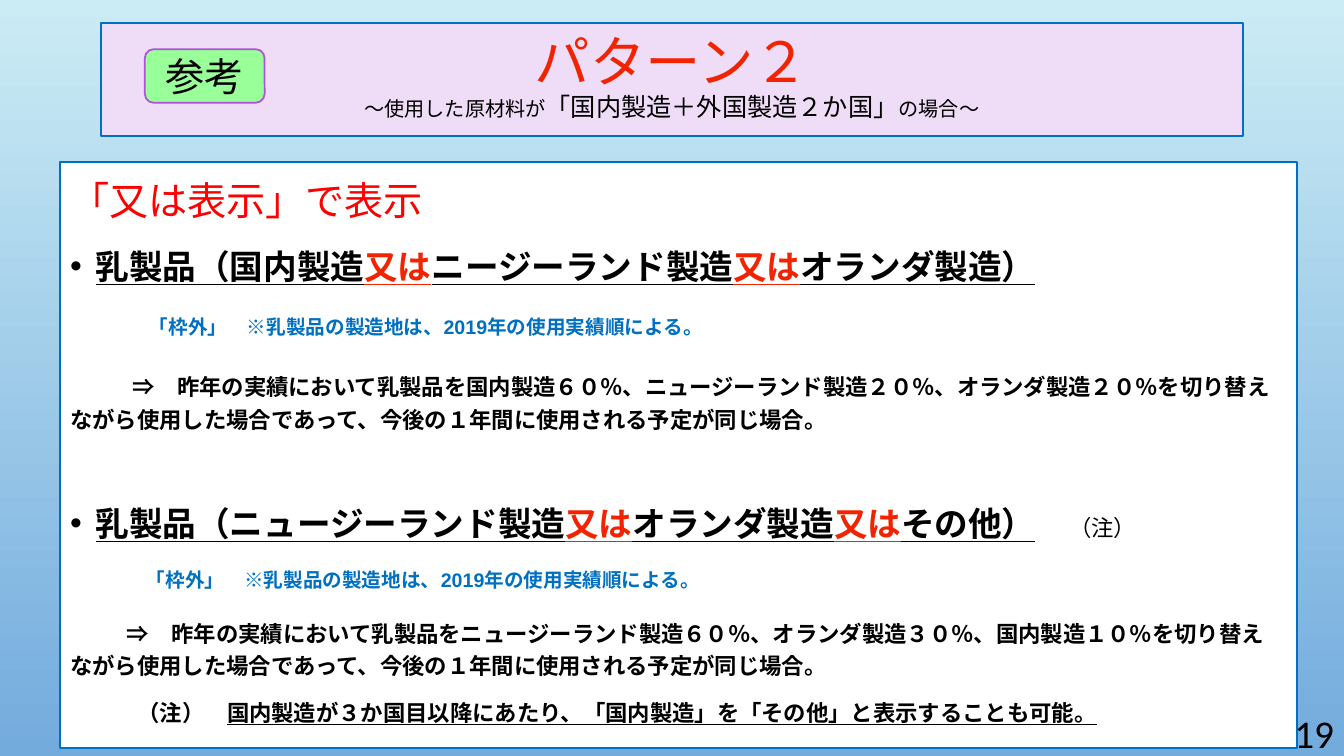
from dataclasses import dataclass

from lxml import etree
from pptx import Presentation
from pptx.dml.color import RGBColor
from pptx.enum.lang import MSO_LANGUAGE_ID
from pptx.enum.shapes import MSO_SHAPE
from pptx.enum.text import MSO_ANCHOR, PP_ALIGN
from pptx.oxml.ns import qn
from pptx.util import Cm, Pt

RECTANGLE, ROUNDED = MSO_SHAPE.RECTANGLE, MSO_SHAPE.ROUNDED_RECTANGLE
TOP, MIDDLE = MSO_ANCHOR.TOP, MSO_ANCHOR.MIDDLE
LEFT, CENTER, RIGHT = PP_ALIGN.LEFT, PP_ALIGN.CENTER, PP_ALIGN.RIGHT
JAPANESE = MSO_LANGUAGE_ID.JAPANESE


@dataclass(frozen=True)
class Theme:
    sky: str = "CBECF5"
    sea: str = "73ABDD"
    lilac: str = "EFDCF7"
    white: str = "FFFFFF"
    mint: str = "99FF99"
    purple: str = "AE52D9"
    blue: str = "0070C0"
    black: str = "000000"
    red: str = "FF0000"
    accent: str = "F22300"
    heading_font: str = "Calibri"
    body_font: str = "Arial"
    title: float = 39.6
    heading: float = 28
    label: float = 24
    subtitle: float = 18
    text: float = 16
    subtitle_small: float = 14.4
    note: float = 14


THEME = Theme()


def rgb(value):
    return RGBColor.from_string(value)


def add_panel(slide, box, fill, line, line_width, kind=RECTANGLE):
    panel = slide.shapes.add_shape(kind, *map(Cm, box))
    panel.shadow.inherit = False
    panel.fill.solid()
    panel.fill.fore_color.rgb = rgb(fill)
    panel.line.color.rgb = rgb(line)
    panel.line.width = Pt(line_width)
    return panel


def format_frame(shape, anchor, **margins):
    frame = shape.text_frame
    values = {"word_wrap": True, "vertical_anchor": anchor,
              **{f"margin_{side}": Cm(size) for side, size in margins.items()}}
    for name, value in values.items():
        setattr(frame, name, value)
    return frame


def add_paragraph(frame, runs, align=LEFT, before=0, spacing=1.2, indent=0.0, bullet=False):
    """Write runs of (text, font values) into the next paragraph of the frame."""
    first = frame.paragraphs[0]
    paragraph = frame.add_paragraph() if first.runs else first
    values = {"alignment": align, "space_before": Pt(before), "line_spacing": spacing}
    for name, value in values.items():
        setattr(paragraph, name, value)
    properties = paragraph._p.get_or_add_pPr()
    hanging = Cm(0.64)
    properties.set("marL", str(hanging if bullet else 0))
    properties.set("indent", str(-hanging if bullet else Cm(indent)))
    if bullet:
        colour = etree.SubElement(properties, qn("a:buClr"))
        etree.SubElement(colour, qn("a:srgbClr"), val=THEME.black)
        etree.SubElement(properties, qn("a:buFont"), typeface=THEME.body_font)
        etree.SubElement(properties, qn("a:buChar"), char="•")
    for text, style in runs:
        run = paragraph.add_run()
        run.text = text
        font_values = {"name": THEME.heading_font, "language_id": JAPANESE, **style}
        run.font.color.rgb = rgb(font_values.pop("color", THEME.black))
        for name, value in font_values.items():
            setattr(run.font, name, value)


def add_background(slide):
    fill = slide.background.fill
    fill.gradient()
    fill.gradient_angle = 270
    for stop, colour, position in zip(fill.gradient_stops, (THEME.sky, THEME.sea), (0, 1)):
        stop.color.rgb = rgb(colour)
        stop.position = position


def add_header(slide, box):
    left, top, _, _ = box
    frame = format_frame(add_panel(slide, box, THEME.lilac, THEME.blue, 1.5), MIDDLE,
                         top=0, bottom=0.07)
    add_paragraph(frame, [("パターン２", {"size": Pt(THEME.title), "color": THEME.accent})],
                  CENTER, spacing=0.9)
    small, large = ({"size": Pt(size)} for size in (THEME.subtitle_small, THEME.subtitle))
    add_paragraph(frame, [("～使用した原材料が", small),
                          ("「国内製造＋外国製造２か国」", large),
                          ("の場合～", small)], CENTER, spacing=0.9)

    badge = add_panel(slide, (left + 1.11, top + 0.66, 3.02, 1.35),
                      THEME.mint, THEME.purple, 1.25, ROUNDED)
    add_paragraph(format_frame(badge, MIDDLE, top=0, bottom=0),
                  [("参考", {"size": Pt(THEME.heading)})], CENTER, spacing=1.0)


def label_runs(*parts):
    """Join the parts of a label with a highlighted 又は."""
    style = {"size": Pt(THEME.label), "bold": True, "underline": True,
             "name": THEME.body_font}
    runs = [(parts[0], style)]
    for part in parts[1:]:
        runs += [("又は", {**style, "color": THEME.accent}), (part, style)]
    return runs


def add_explanation(slide, box):
    frame = format_frame(add_panel(slide, box, THEME.white, THEME.blue, 1.5), TOP, right=0.45)
    text = {"size": Pt(THEME.text)}
    bold = {**text, "bold": True}
    note = [("「枠外」　※乳製品の製造地は、2019年の使用実績順による。",
             {"size": Pt(THEME.note), "bold": True, "color": THEME.blue,
              "name": THEME.body_font})]
    usage = ("⇒　昨年の実績において乳製品を{}を切り替えながら使用した場合であって、"
             "今後の１年間に使用される予定が同じ場合。")

    add_paragraph(frame, [("「又は表示」で表示",
                           {"size": Pt(THEME.heading), "color": THEME.red})])
    add_paragraph(frame, label_runs("乳製品（国内製造", "ニージーランド製造", "オランダ製造）"),
                  before=10, bullet=True)
    add_paragraph(frame, note, before=17, indent=1.98)
    shares = "国内製造６０％、ニュージーランド製造２０％、オランダ製造２０％"
    add_paragraph(frame, [(usage.format(shares), bold)], before=20, spacing=1.25, indent=1.57)

    remark = [("　", {"size": Pt(THEME.label)}), ("（注）", text)]
    add_paragraph(frame, label_runs("乳製品（ニュージーランド製造", "オランダ製造", "その他）") + remark,
                  before=44, bullet=True)
    add_paragraph(frame, note, before=14.5, indent=1.91)
    shares = "ニュージーランド製造６０％、オランダ製造３０％、国内製造１０％"
    add_paragraph(frame, [(usage.format(shares), bold)], before=16.5, indent=1.43)
    add_paragraph(frame, [("（注）　", bold),
                          ("国内製造が３か国目以降にあたり、「国内製造」を「その他」と表示することも可能。",
                           {**bold, "underline": True})], before=10, indent=1.7)


def add_page_number(slide, box):
    frame = format_frame(slide.shapes.add_textbox(*map(Cm, box)), MIDDLE, top=0, bottom=0)
    add_paragraph(frame, [("19", {"size": Pt(THEME.heading)})], RIGHT, spacing=1.0)


def main():
    presentation = Presentation()
    presentation.slide_width, presentation.slide_height = Cm(33.87), Cm(19.05)
    slide = presentation.slides.add_slide(presentation.slide_layouts[6])
    add_background(slide)
    add_header(slide, (2.54, 0.58, 28.78, 2.84))
    add_explanation(slide, (1.52, 4.09, 31.17, 14.76))
    add_page_number(slide, (31.2, 17.87, 2.67, 1.18))
    presentation.save("out.pptx")


if __name__ == "__main__":
    main()
